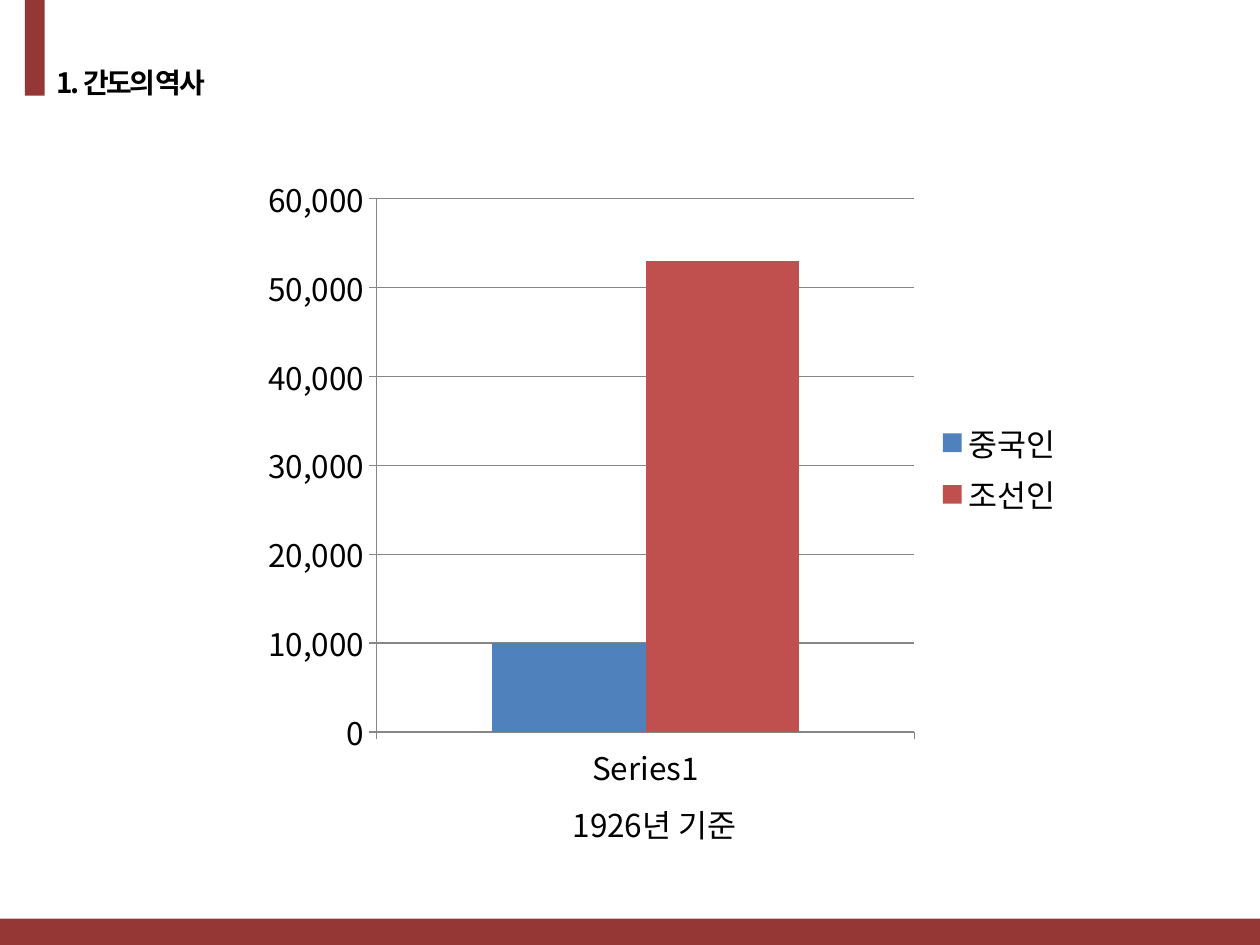
from dataclasses import dataclass

from lxml import etree
from pptx import Presentation
from pptx.chart.data import CategoryChartData
from pptx.dml.color import RGBColor
from pptx.enum.chart import XL_CHART_TYPE, XL_LEGEND_POSITION, XL_TICK_MARK
from pptx.enum.shapes import MSO_SHAPE
from pptx.enum.text import MSO_ANCHOR, PP_ALIGN
from pptx.oxml import parse_xml
from pptx.oxml.ns import nsdecls, qn
from pptx.util import Cm, Pt

COLUMNS = XL_CHART_TYPE.COLUMN_CLUSTERED
RIGHT = XL_LEGEND_POSITION.RIGHT
OUTSIDE = XL_TICK_MARK.OUTSIDE
RECTANGLE = MSO_SHAPE.RECTANGLE
MIDDLE = MSO_ANCHOR.MIDDLE
CENTER = PP_ALIGN.CENTER


@dataclass(frozen=True)
class Theme:
    font: str = "Noto Sans CJK KR"
    title_size: Pt = Pt(16)
    body_size: Pt = Pt(18)
    text: RGBColor = RGBColor(0, 0, 0)
    paper: RGBColor = RGBColor(255, 255, 255)
    accent: RGBColor = RGBColor(0x95, 0x37, 0x35)
    axis: RGBColor = RGBColor(0x86, 0x86, 0x86)
    chinese: RGBColor = RGBColor(0x4F, 0x81, 0xBD)
    korean: RGBColor = RGBColor(0xC0, 0x50, 0x4D)


theme = Theme()


def style_font(font, properties, size):
    font.name = theme.font
    font.size = size
    font.color.rgb = theme.text
    east_asian = etree.SubElement(properties, qn("a:ea"))
    east_asian.set("typeface", theme.font)


def add_block(left, top, width, height, color):
    block = page.shapes.add_shape(RECTANGLE, Cm(left), Cm(top), Cm(width), Cm(height))
    block.shadow.inherit = False
    block.fill.solid()
    block.fill.fore_color.rgb = color
    block.line.fill.background()
    return block


deck = Presentation()
deck.slide_width, deck.slide_height = Cm(25.4), Cm(19.05)
page = deck.slides.add_slide(deck.slide_layouts[6])

title = page.shapes.add_textbox(Cm(0.89), Cm(0.86), Cm(24), Cm(1.14))
title.text_frame.word_wrap = True
para = title.text_frame.paragraphs[0]
para.line_spacing = 1.5
indent = Cm(0.97)
para_properties = para._p.get_or_add_pPr()
para_properties.set("marL", str(indent))
para_properties.set("indent", str(-indent))
span = para.add_run()
span.text = "1. 간도의 역사"
span.font.bold = True
span_properties = span._r.get_or_add_rPr()
style_font(span.font, span_properties, theme.title_size)
span_properties.set("spc", "-150")

add_block(0.5, 0, 0.4, 1.93, theme.accent)
add_block(0, 18.52, 25.4, 0.53, theme.accent)

population = CategoryChartData(number_format="#,##0")
population.categories = ["Series1"]
population.add_series("중국인", [10000])
population.add_series("조선인", [53000])
chart = page.shapes.add_chart(
    COLUMNS, Cm(4.5), Cm(3.12), Cm(17.2), Cm(12.8), population
).chart
chart.has_title = False
style_font(chart.font, chart.font._rPr, theme.body_size)
chart.has_legend = True
chart.legend.position = RIGHT
chart.legend.include_in_layout = False

plot = chart.plots[0]
plot.gap_width = 150
plot.overlap = 0
plot.vary_by_categories = False
for series, color in zip(plot.series, (theme.chinese, theme.korean)):
    series.format.fill.solid()
    series.format.fill.fore_color.rgb = color

value_axis = chart.value_axis
value_axis.minimum_scale, value_axis.maximum_scale = 0, 60000
value_axis.major_unit = 10000
value_axis.has_major_gridlines = True
value_axis.tick_labels.number_format = "#,##0"
value_axis.tick_labels.number_format_is_linked = False
for axis in (chart.category_axis, value_axis):
    axis.major_tick_mark = OUTSIDE
    axis.format.line.color.rgb = theme.axis
    axis.format.line.width = Pt(0.75)
gridline = value_axis.major_gridlines.format.line
gridline.color.rgb = theme.axis
gridline.width = Pt(0.75)

plot_area = chart._chartSpace.chart.plotArea
for layout in plot_area.findall(qn("c:layout")):
    plot_area.remove(layout)
settings = [("layoutTarget", "inner"), ("xMode", "edge"), ("yMode", "edge"),
            ("x", 0.18), ("y", 0.07), ("w", 0.63), ("h", 0.85)]
entries = "".join(f'<c:{name} val="{value}"/>' for name, value in settings)
plot_area.insert(0, parse_xml(
    f'<c:layout {nsdecls("c")}><c:manualLayout>{entries}</c:manualLayout></c:layout>'
))

caption = add_block(11.1, 16.13, 4.19, 0.99, theme.paper)
caption.line.color.rgb = theme.paper
caption.line.width = Pt(2)
caption.text_frame.word_wrap = True
caption.text_frame.vertical_anchor = MIDDLE
para = caption.text_frame.paragraphs[0]
para.alignment = CENTER
span = para.add_run()
span.text = "1926년 기준"
style_font(span.font, span._r.get_or_add_rPr(), theme.body_size)

deck.save("out.pptx")
